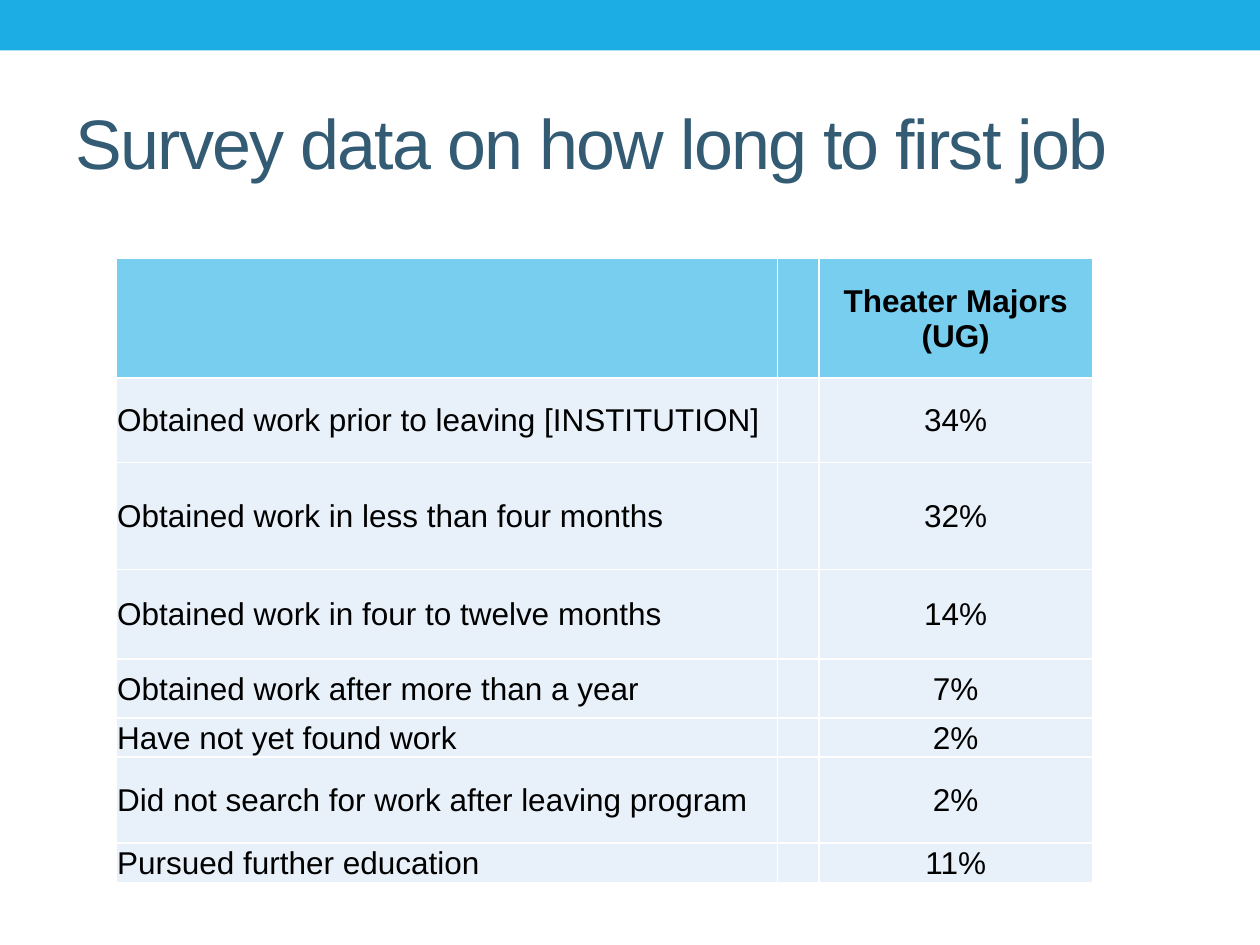
from lxml import etree
from pptx import Presentation
from pptx.dml.color import RGBColor
from pptx.enum import shapes, text
from pptx.oxml import ns
from pptx.util import Inches, Pt

HUES = {"bar": "1CADE4", "title": "335B74", "head": "77CEEF",
        "body": "E8F1FA", "ink": "000000", "rule": "FFFFFF"}
FONT = "Arial"
COLS = [5.25, 0.33, 2.17]
ROWS = [
    (0.95, "", "Theater Majors (UG)"),
    (0.67, "Obtained work prior to leaving [INSTITUTION]", "34%"),
    (0.85, "Obtained work in less than four months", "32%"),
    (0.71, "Obtained work in four to twelve months", "14%"),
    (0.47, "Obtained work after more than a year", "7%"),
    (0.31, "Have not yet found work", "2%"),
    (0.68, "Did not search for work after leaving program", "2%"),
    (0.32, "Pursued further education", "11%"),
]


def hue(name):
    """Return the named colour."""
    return RGBColor.from_string(HUES[name])


def add_run(para, words, size, tint, bold=False):
    """Add one styled run to a paragraph."""
    run = para.add_run()
    run.text = words
    run.font.name, run.font.size, run.font.bold = FONT, Pt(size), bold
    run.font.color.rgb = hue(tint)
    return run


def add_bar(slide, left, top, width, height):
    """Place the band along the top edge."""
    bar = slide.shapes.add_shape(shapes.MSO_SHAPE.RECTANGLE, Inches(left),
                                 Inches(top), Inches(width), Inches(height))
    bar.shadow.inherit = False
    bar.fill.solid()
    bar.fill.fore_color.rgb = hue("bar")
    bar.line.fill.background()


def set_title(slide, left, top, width, height):
    """Move and fill the title placeholder."""
    title = slide.shapes.title
    title.left, title.top = Inches(left), Inches(top)
    title.width, title.height = Inches(width), Inches(height)
    frame = title.text_frame
    frame.vertical_anchor = text.MSO_ANCHOR.MIDDLE
    para = frame.paragraphs[0]
    para.alignment = text.PP_ALIGN.LEFT
    run = add_run(para, "Survey data on how long to first job", 40, "title")
    run.font._element.set("spc", "-100")


def add_rules(cell):
    """Draw a thin rule on each side of a cell."""
    props = cell._tc.get_or_add_tcPr()
    for spot, side in enumerate(("lnL", "lnR", "lnT", "lnB")):
        line = etree.Element(ns.qn(f"a:{side}"), w=str(Pt(1)))
        fill = etree.SubElement(line, ns.qn("a:solidFill"))
        etree.SubElement(fill, ns.qn("a:srgbClr"), val=HUES["rule"])
        props.insert(spot, line)


def fill_cell(cell, words, head, align):
    """Style one cell and write its words."""
    cell.fill.solid()
    cell.fill.fore_color.rgb = hue("head" if head else "body")
    cell.margin_left = cell.margin_right = cell.margin_top = Inches(0.01)
    cell.margin_bottom = 0
    cell.vertical_anchor = text.MSO_ANCHOR.MIDDLE
    para = cell.text_frame.paragraphs[0]
    para.alignment = align
    if words:
        add_run(para, words, 18, "ink", head)
    else:
        etree.SubElement(para._p, ns.qn("a:endParaRPr"), sz="1200")
    add_rules(cell)


def add_grid(slide, left, top, width, height):
    """Place the table of job search times."""
    grid = slide.shapes.add_table(len(ROWS), len(COLS), Inches(left), Inches(top),
                                  Inches(width), Inches(height)).table
    for col, wide in zip(grid.columns, COLS):
        col.width = Inches(wide)
    sides = (text.PP_ALIGN.LEFT, text.PP_ALIGN.LEFT, text.PP_ALIGN.CENTER)
    for r, (tall, label, share) in enumerate(ROWS):
        grid.rows[r].height = Inches(tall)
        for c, words in enumerate((label, "", share)):
            fill_cell(grid.cell(r, c), words, r == 0, sides[c])


def main():
    """Build and save the slide."""
    deck = Presentation()
    deck.slide_width, deck.slide_height = Inches(10), Inches(7.5)
    slide = deck.slides.add_slide(deck.slide_layouts[5])
    add_bar(slide, 0, 0, 10, 0.4)
    set_title(slide, 0.5, 0.58, 9, 1.08)
    add_grid(slide, 0.92, 2.05, sum(COLS), sum(row[0] for row in ROWS))
    deck.save("out.pptx")


if __name__ == "__main__":
    main()
